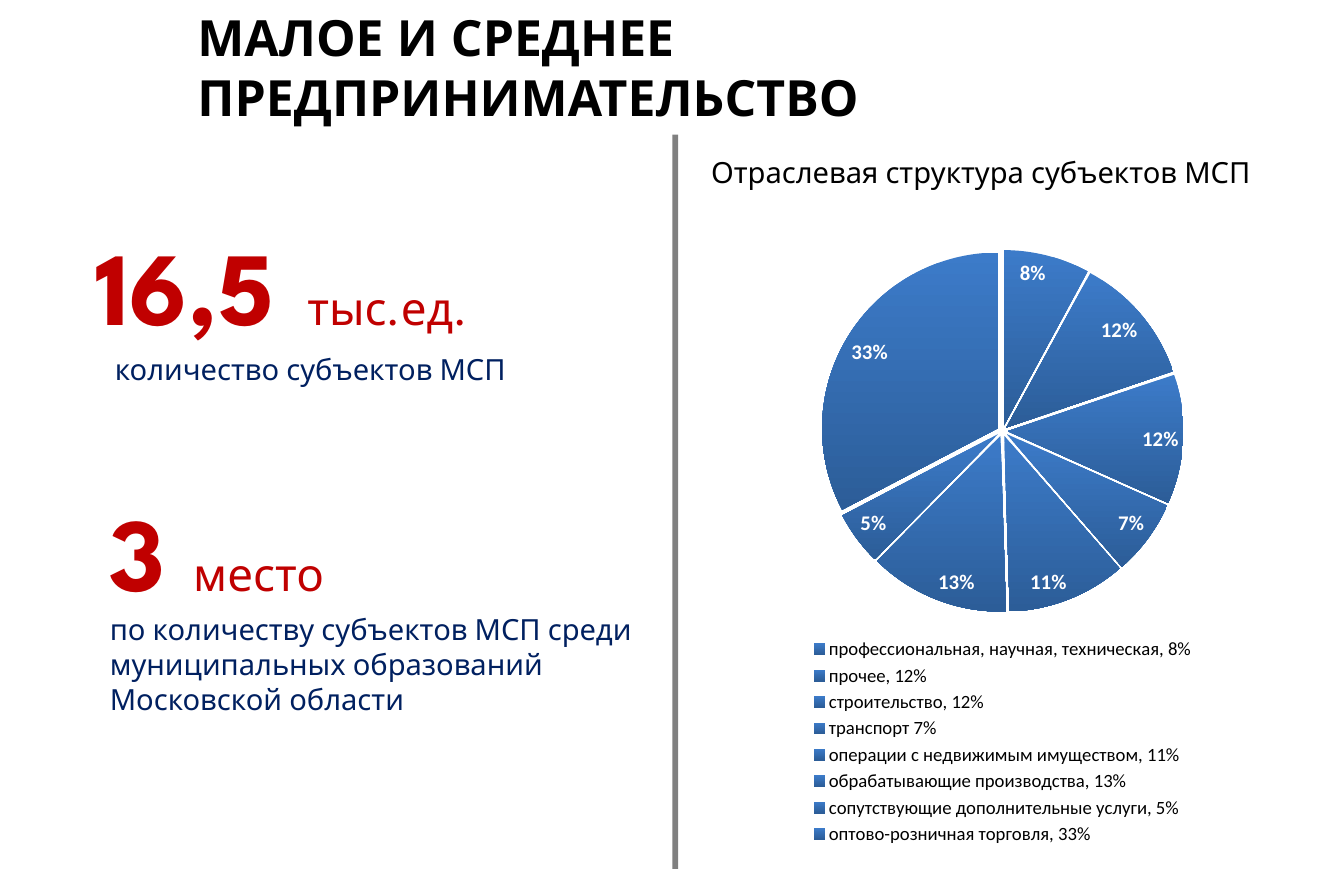
from dataclasses import dataclass

import lxml.etree
import pptx
import pptx.chart.data
import pptx.dml.color
import pptx.enum.chart
import pptx.enum.shapes
import pptx.enum.text
import pptx.oxml.ns
import pptx.util

Cm = pptx.util.Cm
Pt = pptx.util.Pt


@dataclass(frozen=True)
class Theme:
    heading_font: str = "League Spartan"
    chart_font: str = "Calibri"
    black: str = "000000"
    white: str = "FFFFFF"
    red: str = "C00000"
    navy: str = "002060"
    gray: str = "808080"
    slice_top: str = "3C7BC9"
    slice_bottom: str = "2C5D98"
    title: int = 48
    figure: int = 100
    figure_gap: int = 120
    unit: int = 44
    body: int = 28
    label: int = 20
    legend: int = 18


@dataclass(frozen=True)
class Span:
    text: str
    size: int
    color: str
    bold: bool = False


@dataclass(frozen=True)
class Para:
    spans: tuple[Span, ...]
    indent: float = 0


@dataclass(frozen=True)
class TextBox:
    left: float
    top: float
    width: float
    height: float
    paras: tuple[Para, ...]
    middle: bool = False
    side_inset: float = 0.25
    edge_inset: float = 0.13


@dataclass(frozen=True)
class Sector:
    name: str
    share: float


THEME = Theme()

BOXES = (
    TextBox(6.27, 0, 38.76, 4.5,
            (Para((Span("МАЛОЕ И СРЕДНЕЕ ПРЕДПРИНИМАТЕЛЬСТВО",
                        THEME.title, THEME.black, True),)),),
            True, 0.43, 0.23),
    TextBox(3, 6.7, 19, 6.58,
            (Para((Span("16,5", THEME.figure, THEME.red, True),
                   Span(" ", THEME.figure_gap, THEME.red, True),
                   Span("тыс.ед.", THEME.unit, THEME.red))),
             Para((Span("количество субъектов МСП", THEME.body, THEME.navy),), 0.65))),
    TextBox(3.48, 16.4, 18.54, 8.13,
            (Para((Span("3 ", THEME.figure, THEME.red, True),
                   Span("место", THEME.unit, THEME.red))),
             Para((Span("по количеству субъектов МСП среди муниципальных "
                        "образований Московской области", THEME.body, THEME.navy),)))),
    TextBox(23.7, 5, 21, 1.63,
            (Para((Span("Отраслевая структура субъектов МСП",
                        THEME.body, THEME.black),)),),
            False, 0.43, 0.23),
)

SECTORS = (
    Sector("профессиональная, научная, техническая, 8%", 0.08),
    Sector("прочее, 12%", 0.12),
    Sector("строительство, 12%", 0.12),
    Sector("транспорт 7%", 0.07),
    Sector("операции с недвижимым имуществом, 11%", 0.11),
    Sector("обрабатывающие производства, 13%", 0.13),
    Sector("сопутствующие дополнительные услуги, 5%", 0.05),
    Sector("оптово-розничная торговля, 33%", 0.33),
)


def rgb(value: str) -> pptx.dml.color.RGBColor:
    return pptx.dml.color.RGBColor.from_string(value)


def set_font(font, name: str, size: int, color: str, bold: bool = False) -> None:
    font.name = name
    font.size = Pt(size)
    font.bold = bold
    font.color.rgb = rgb(color)


def draw_text(page, item: TextBox) -> None:
    box = page.shapes.add_textbox(
        Cm(item.left), Cm(item.top), Cm(item.width), Cm(item.height))
    frame = box.text_frame
    frame.word_wrap = True
    frame.margin_left = frame.margin_right = Cm(item.side_inset)
    frame.margin_top = frame.margin_bottom = Cm(item.edge_inset)
    anchors = pptx.enum.text.MSO_ANCHOR
    frame.vertical_anchor = anchors.MIDDLE if item.middle else anchors.TOP
    frame.text = "\n".join("" for _ in item.paras)
    for para, content in zip(frame.paragraphs, item.paras):
        if content.indent:
            para._p.get_or_add_pPr().set("marL", str(Cm(content.indent)))
        for span in content.spans:
            run = para.add_run()
            run.text = span.text
            set_font(run.font, THEME.heading_font, span.size, span.color, span.bold)


def draw_divider(page) -> None:
    divider = page.shapes.add_shape(
        pptx.enum.shapes.MSO_SHAPE.RECTANGLE, Cm(22.81), Cm(4.57), Cm(0.2), Cm(24.92))
    divider.shadow.inherit = False
    divider.fill.solid()
    divider.fill.fore_color.rgb = rgb(THEME.gray)
    divider.line.fill.background()


def place_plot(chart) -> None:
    qn = pptx.oxml.ns.qn
    area = chart._chartSpace.chart.plotArea
    for old in area.findall(qn("c:layout")):
        area.remove(old)
    layout = lxml.etree.Element(qn("c:layout"))
    manual = lxml.etree.SubElement(layout, qn("c:manualLayout"))
    settings = {"layoutTarget": "inner", "xMode": "edge", "yMode": "edge",
                "x": "0.21", "y": "0.05", "w": "0.58", "h": "0.6"}
    for tag, value in settings.items():
        lxml.etree.SubElement(manual, qn(f"c:{tag}")).set("val", value)
    area.insert(0, layout)


def explode(series, percent: int) -> None:
    qn = pptx.oxml.ns.qn
    explosion = lxml.etree.Element(qn("c:explosion"))
    explosion.set("val", str(percent))
    series._element.find(qn("c:tx")).addnext(explosion)


def draw_pie(page, sectors: tuple[Sector, ...]) -> None:
    data = pptx.chart.data.CategoryChartData(number_format="0%")
    data.categories = [sector.name for sector in sectors]
    data.add_series("Series 1", [sector.share for sector in sectors])
    chart = page.shapes.add_chart(
        pptx.enum.chart.XL_CHART_TYPE.PIE,
        Cm(23.42), Cm(6.99), Cm(21.18), Cm(21.82), data).chart
    chart.has_title = False
    set_font(chart.font, THEME.chart_font, THEME.legend, THEME.black)
    chart.has_legend = True
    chart.legend.position = pptx.enum.chart.XL_LEGEND_POSITION.BOTTOM
    chart.legend.include_in_layout = False
    set_font(chart.legend.font, THEME.chart_font, THEME.legend, THEME.black)
    place_plot(chart)

    plot = chart.plots[0]
    plot.vary_by_categories = True
    series = plot.series[0]
    explode(series, 3)
    for index in range(len(sectors)):
        look = series.points[index].format
        look.fill.gradient()
        look.fill.gradient_angle = 270
        for stop, color in zip(look.fill.gradient_stops,
                               (THEME.slice_top, THEME.slice_bottom)):
            stop.color.rgb = rgb(color)
        look.line.fill.background()

    labels = series.data_labels
    labels.show_value = True
    labels.number_format = "0%"
    labels.number_format_is_linked = False
    labels.position = pptx.enum.chart.XL_LABEL_POSITION.INSIDE_END
    set_font(labels.font, THEME.chart_font, THEME.label, THEME.white, True)


def main() -> None:
    deck = pptx.Presentation()
    deck.slide_width = Cm(45.6)
    deck.slide_height = Cm(30)
    page = deck.slides.add_slide(deck.slide_layouts[6])
    draw_divider(page)
    for item in BOXES:
        draw_text(page, item)
    draw_pie(page, SECTORS)
    deck.save("out.pptx")


if __name__ == "__main__":
    main()
